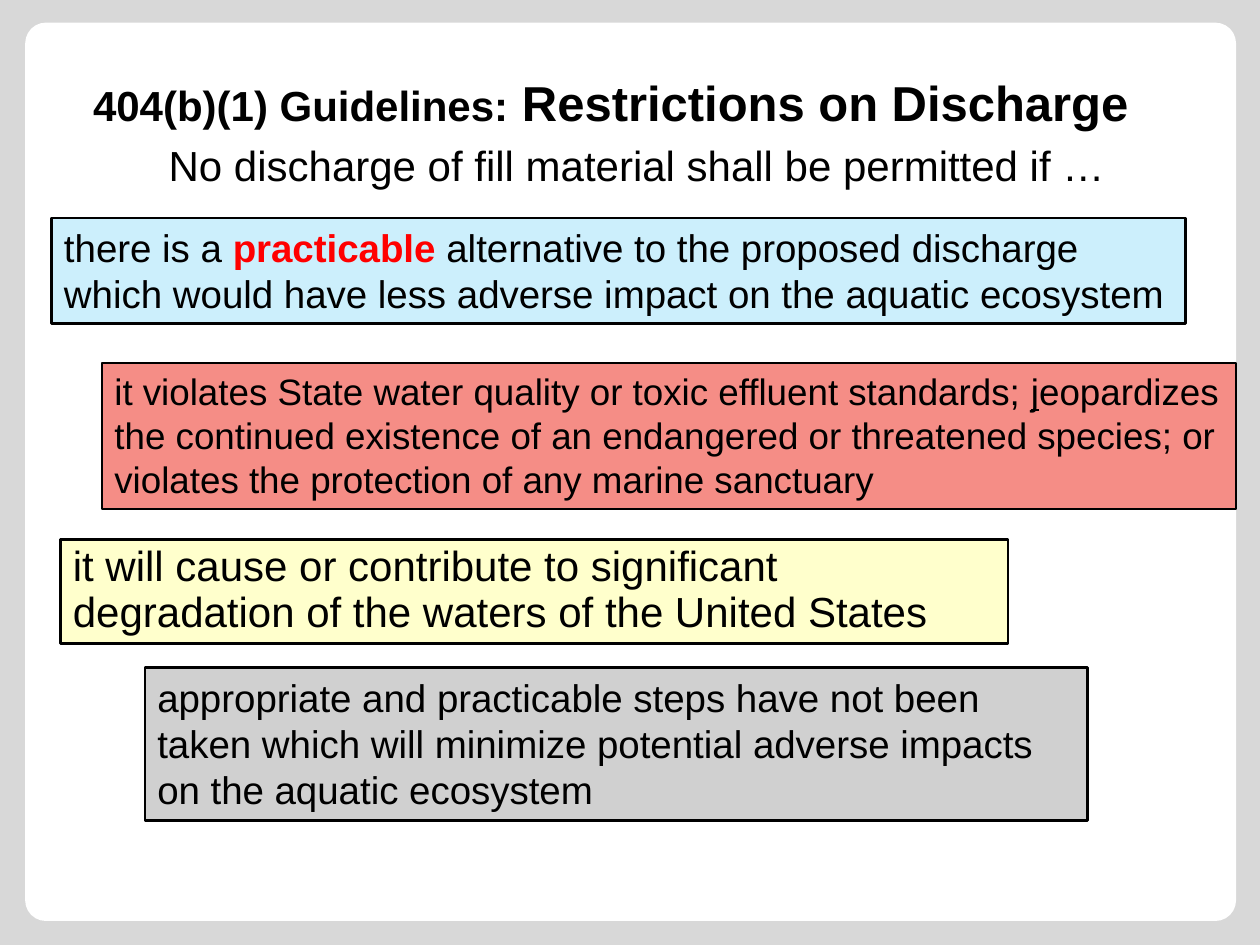
from lxml import etree
from pptx import Presentation
from pptx.dml.color import RGBColor
from pptx.enum import shapes, text
from pptx.oxml.ns import qn
from pptx.util import Inches, Pt

FONT = "Arial"
BLACK = "000000"
PANEL = (0.2, 0.18, 9.61, 7.13)

HEADINGS = [
    {"at": (0.64, 0.43, 8.5, 0.75), "anchor": text.MSO_ANCHOR.MIDDLE, "runs": [
        ("404(b)(1) Guidelines:", {"size": 24, "bold": True}),
        (" Restrictions on Discharge", {"size": 28, "bold": True})]},
    {"at": (1.24, 1.06, 7.65, 0.5), "runs": [
        ("No discharge of fill material shall be permitted if …", {"size": 24})]},
]

RESTRICTIONS = [
    {"at": (0.41, 1.73, 9, 0.84), "fill": "00B0F0", "opacity": 20, "size": 22, "runs": [
        ("there is a ", {}),
        ("practicable", {"bold": True, "color": "FF0000"}),
        (" alternative to the proposed discharge which would have less adverse "
         "impact on the aquatic ecosystem", {})]},
    {"at": (0.81, 2.88, 9, 1.16), "fill": "F58D86", "size": 21, "runs": [
        ("it violates State water quality or toxic effluent standards; ", {}),
        ("j", {"underline": True}),
        ("eopardizes the continued existence of an endangered or threatened species; "
         "or violates the protection of any marine sanctuary", {})]},
    {"at": (0.48, 4.28, 7.52, 0.83), "fill": "FFFF00", "opacity": 20, "size": 24,
     "spacing": 0.9, "runs": [
        ("it will cause or contribute to significant degradation of the waters "
         "of the United States", {})]},
    {"at": (1.15, 5.3, 7.48, 1.21), "fill": "A3A3A3", "opacity": 50, "size": 22, "runs": [
        ("appropriate and practicable steps have not been taken which will minimize "
         "potential adverse impacts on the aquatic ecosystem", {})]},
]


def paint(fill, color, opacity=100):
    fill.solid()
    fill.fore_color.rgb = RGBColor.from_string(color)
    if opacity < 100:
        element = fill._xPr.find(qn("a:solidFill"))[0]
        etree.SubElement(element, qn("a:alpha"), val=str(opacity * 1000))


def add_panel(slide, kind, at, color, opacity=100):
    shape = slide.shapes.add_shape(kind, *map(Inches, at))
    shape.shadow.inherit = False
    paint(shape.fill, color, opacity)
    return shape


def write(shape, item):
    frame = shape.text_frame
    frame.word_wrap = True
    frame.vertical_anchor = item.get("anchor", text.MSO_ANCHOR.TOP)
    paragraph = frame.paragraphs[0]
    paragraph.alignment = text.PP_ALIGN.LEFT
    paragraph.line_spacing = item.get("spacing", 1.0)
    for words, changes in item["runs"]:
        style = {"name": FONT, "size": item.get("size"), "color": BLACK, **changes}
        run = paragraph.add_run()
        run.text = words
        paint(run.font.fill, style.pop("color"))
        style["size"] = Pt(style["size"])
        for name, value in style.items():
            setattr(run.font, name, value)


def main():
    presentation = Presentation()
    presentation.slide_width = Inches(10)
    presentation.slide_height = Inches(7.5)
    slide = presentation.slides.add_slide(presentation.slide_layouts[6])
    paint(slide.background.fill, "D8D8D8")

    panel = add_panel(slide, shapes.MSO_SHAPE.ROUNDED_RECTANGLE, PANEL, "FFFFFF")
    panel.adjustments[0] = 0.023
    panel.line.fill.background()

    for heading in HEADINGS:
        write(slide.shapes.add_textbox(*map(Inches, heading["at"])), heading)

    for restriction in RESTRICTIONS:
        box = add_panel(slide, shapes.MSO_SHAPE.RECTANGLE, restriction["at"],
                        restriction["fill"], restriction.get("opacity", 100))
        paint(box.line.fill, BLACK)
        box.line.width = Pt(1.5)
        write(box, restriction)

    presentation.save("out.pptx")


if __name__ == "__main__":
    main()
